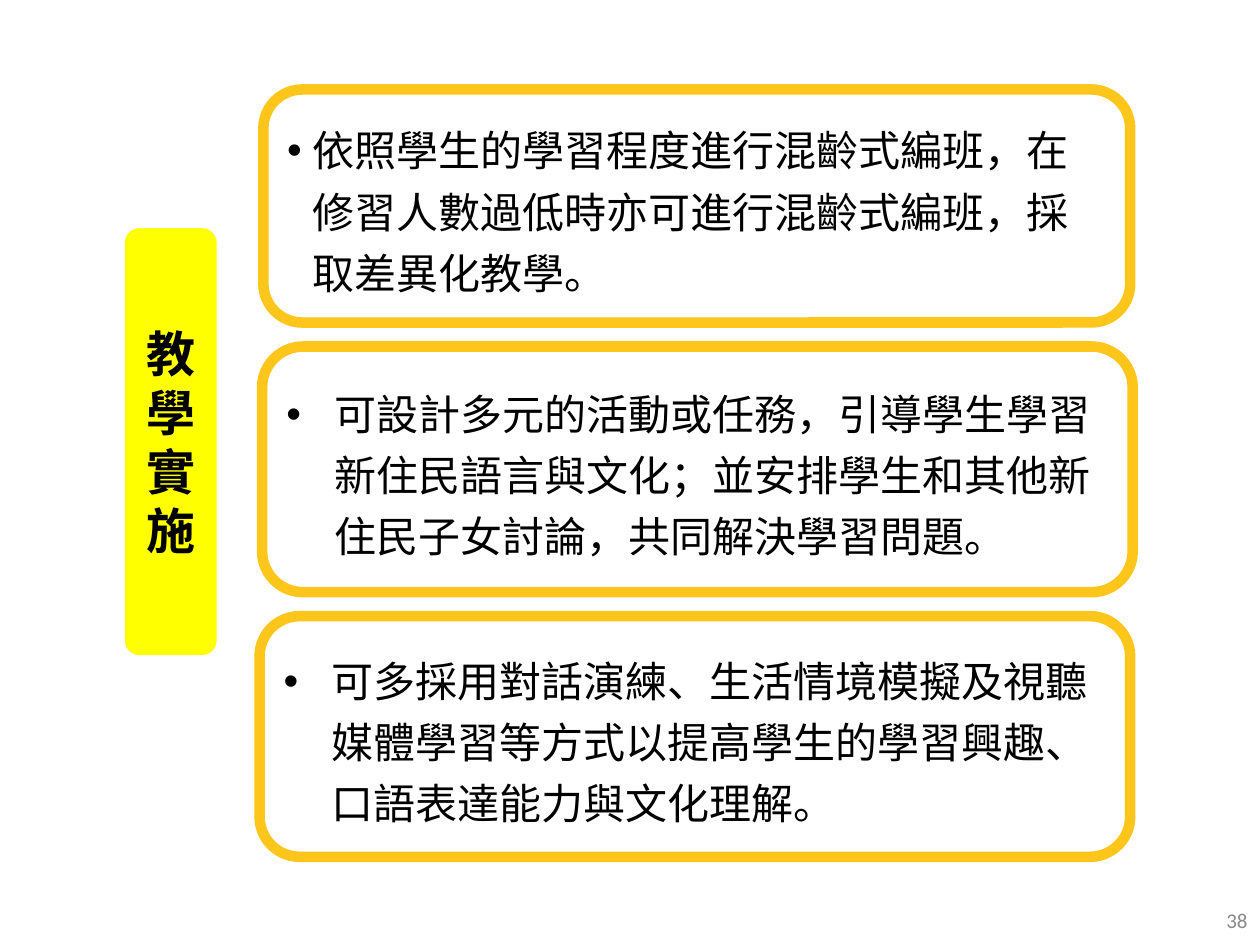
from lxml import etree
from pptx import Presentation
from pptx.dml.color import RGBColor
from pptx.enum.shapes import MSO_SHAPE
from pptx.enum.text import MSO_ANCHOR, PP_ALIGN
from pptx.oxml.ns import qn
from pptx.util import Inches, Pt

ALTERNATE_PROCESS = MSO_SHAPE.FLOWCHART_ALTERNATE_PROCESS
MIDDLE = MSO_ANCHOR.MIDDLE
LEFT, CENTER, RIGHT = PP_ALIGN.LEFT, PP_ALIGN.CENTER, PP_ALIGN.RIGHT

BLACK = RGBColor(0x00, 0x00, 0x00)
WHITE = RGBColor(0xFF, 0xFF, 0xFF)
YELLOW = RGBColor(0xFF, 0xFF, 0x00)
AMBER = RGBColor(0xFE, 0xC5, 0x1A)
GRAY = RGBColor(0x89, 0x89, 0x89)

CJK_FONT = "Noto Sans CJK SC"
LABEL_FORMAT = {"name": CJK_FONT, "size": Pt(28), "bold": True}
BODY_FORMAT = {"name": CJK_FONT, "size": Pt(24), "bold": False}
NUMBER_FORMAT = {"name": "Calibri", "size": Pt(12), "bold": False}

CARDS = [
    ((2.08, 2.75, 6.91, 1.95), 0.38,
     "可設計多元的活動或任務，引導學生學習新住民語言與文化；並安排學生和其他新住民子女討論，共同解決學習問題。"),
    ((2.06, 4.89, 6.91, 1.91), 0.38,
     "可多採用對話演練、生活情境模擬及視聽媒體學習等方式以提高學生的學習興趣、口語表達能力與文化理解。"),
    ((2.09, 0.71, 6.88, 1.85), 0.2,
     "依照學生的學習程度進行混齡式編班，在修習人數過低時亦可進行混齡式編班，採取差異化教學。"),
]


def write_run(paragraph, text, font_format, color, alignment):
    paragraph.alignment = alignment
    run = paragraph.add_run()
    run.text = text
    for name, value in font_format.items():
        setattr(run.font, name, value)
    run.font.color.rgb = color
    east_asian = etree.SubElement(run.font._element, qn("a:ea"))
    east_asian.set("typeface", font_format["name"])


def add_bullet(paragraph, indent):
    properties = paragraph._p.get_or_add_pPr()
    properties.set("marL", str(Inches(indent)))
    properties.set("indent", str(-Inches(indent)))
    etree.SubElement(properties, qn("a:buFont")).set("typeface", "Arial")
    etree.SubElement(properties, qn("a:buChar")).set("char", "•")


def add_panel(slide, box, fill, line, line_width):
    shape = slide.shapes.add_shape(ALTERNATE_PROCESS, *map(Inches, box))
    shape.shadow.inherit = False
    shape.fill.solid()
    shape.fill.fore_color.rgb = fill
    shape.line.color.rgb = line
    shape.line.width = Pt(line_width)
    shape.text_frame.word_wrap = True
    shape.text_frame.vertical_anchor = MIDDLE
    return shape.text_frame


def add_side_label(slide, box, text):
    frame = add_panel(slide, box, YELLOW, WHITE, 1.5)
    for index, character in enumerate(text):
        paragraph = frame.add_paragraph() if index else frame.paragraphs[0]
        write_run(paragraph, character, LABEL_FORMAT, BLACK, CENTER)


def add_card(slide, box, indent, text):
    paragraph = add_panel(slide, box, WHITE, AMBER, 6).paragraphs[0]
    add_bullet(paragraph, indent)
    paragraph.line_spacing = Pt(35)
    write_run(paragraph, text, BODY_FORMAT, BLACK, LEFT)


def add_page_number(slide, box, text):
    frame = slide.shapes.add_textbox(*map(Inches, box)).text_frame
    frame.word_wrap = True
    frame.vertical_anchor = MIDDLE
    write_run(frame.paragraphs[0], text, NUMBER_FORMAT, GRAY, RIGHT)


def main():
    presentation = Presentation()
    presentation.slide_width = Inches(10)
    presentation.slide_height = Inches(7.5)
    slide = presentation.slides.add_slide(presentation.slide_layouts[6])
    add_side_label(slide, (0.98, 1.8, 0.75, 3.41), "教學實施")
    for box, indent, text in CARDS:
        add_card(slide, box, indent, text)
    add_page_number(slide, (7.75, 7.1, 2.25, 0.4), "38")
    presentation.save("out.pptx")


if __name__ == "__main__":
    main()
